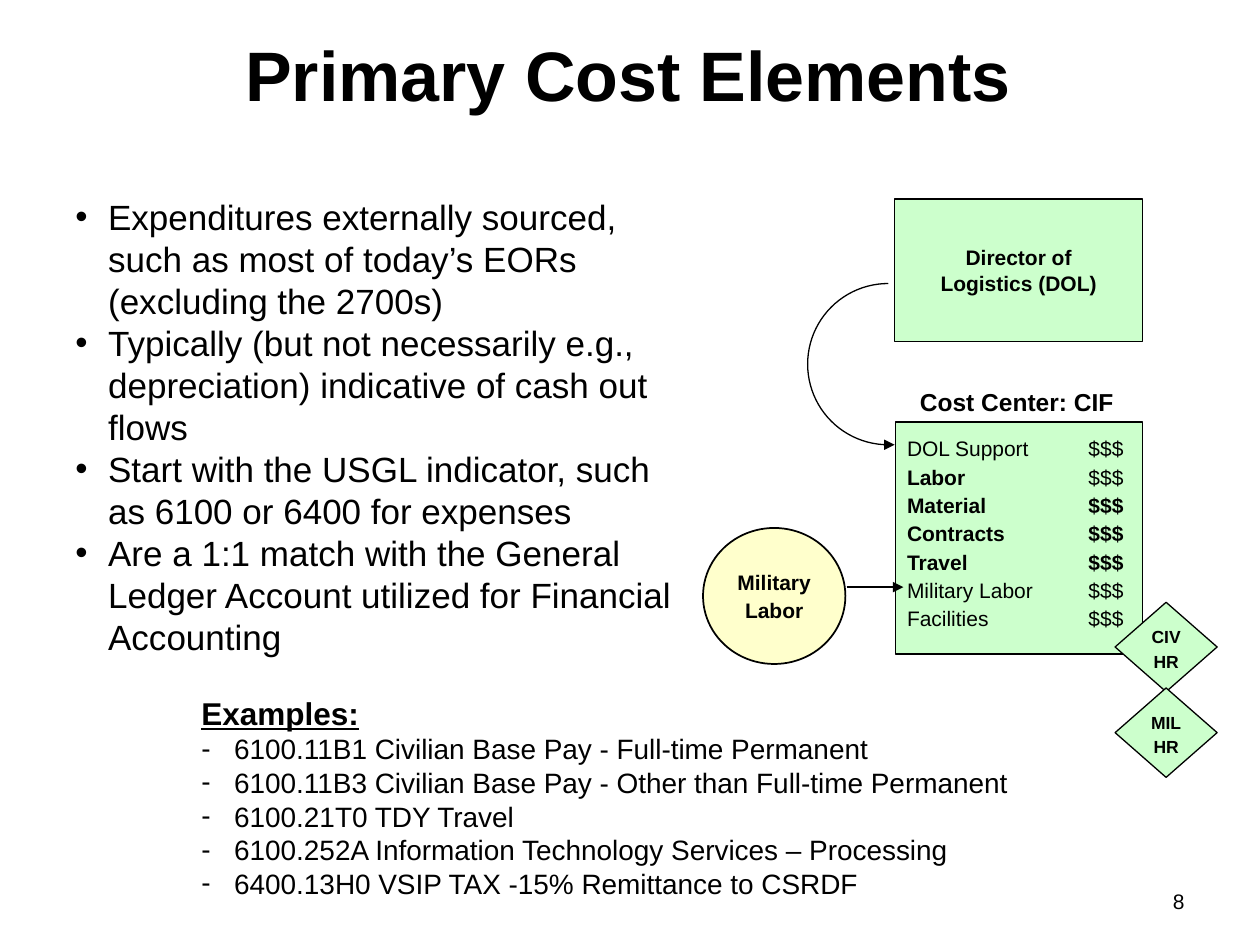
import lxml.etree
import pptx
import pptx.dml.color
import pptx.enum.shapes
import pptx.enum.text
import pptx.oxml.ns
import pptx.util

COLUMNS, ROWS = 100, 75  # grid cells are a tenth of an inch
SHAPES = pptx.enum.shapes.MSO_SHAPE
ALIGN = pptx.enum.text.PP_ALIGN
ANCHOR = pptx.enum.text.MSO_ANCHOR
GREEN, YELLOW, BLACK = "CCFFCC", "FFFFCC", "000000"


def color(hex_string):
    return pptx.dml.color.RGBColor.from_string(hex_string)


def add_xml(parent, tag, **attributes):
    return lxml.etree.SubElement(parent, pptx.oxml.ns.qn(tag), attributes)


class SlideBuilder:
    font_name = "Arial"
    hanging = 0.26  # bullet indent in inches

    def __init__(self, deck):
        self.slide = deck.slides.add_slide(deck.slide_layouts[6])
        self.cell_width = deck.slide_width / COLUMNS
        self.cell_height = deck.slide_height / ROWS

    def place(self, column, row):
        return round(column * self.cell_width), round(row * self.cell_height)

    def fill_text(self, shape, lines, size, bold=False, align=ALIGN.LEFT, after=0,
                  bullet=None, tab=None, heading=None, inset=0.05,
                  anchor=ANCHOR.TOP, wrap=True):
        """Each line is a string, or a list of (text, bold) spans."""
        frame = shape.text_frame
        frame.word_wrap = wrap
        frame.vertical_anchor = anchor
        frame.margin_left = frame.margin_right = pptx.util.Inches(0.1)
        frame.margin_top = frame.margin_bottom = pptx.util.Inches(inset)
        all_lines = [heading, *lines] if heading else lines
        for number, line in enumerate(all_lines):
            para = frame.paragraphs[0] if number == 0 else frame.add_paragraph()
            is_heading = heading is not None and number == 0
            para.alignment = align
            if after:
                para.space_after = pptx.util.Pt(after)
            properties = para._p.get_or_add_pPr()
            if bullet and not is_heading:
                indent = pptx.util.Inches(self.hanging)
                properties.set("marL", str(indent))
                properties.set("indent", str(-indent))
                bullet_color = add_xml(properties, "a:buClr")
                add_xml(bullet_color, "a:srgbClr", val=BLACK)
                add_xml(properties, "a:buFont", typeface=self.font_name)
                add_xml(properties, "a:buChar", char=bullet)
            if tab:
                tabs = add_xml(properties, "a:tabLst")
                add_xml(tabs, "a:tab", pos=str(pptx.util.Inches(tab)), algn="l")
            para.font.name = self.font_name
            para.font.size = pptx.util.Pt(size + 2 if is_heading else size)
            para.font.color.rgb = color(BLACK)
            if isinstance(line, str):
                para.font.bold = bold or is_heading
                para.font.underline = is_heading
                para.add_run().text = line
            else:
                for text, span_bold in line:
                    span = para.add_run()
                    span.text = text
                    span.font.bold = span_bold

    def text(self, column, row, width, height, lines, size, **style):
        box = self.slide.shapes.add_textbox(
            *self.place(column, row), *self.place(width, height))
        self.fill_text(box, lines, size, **style)

    def shape(self, kind, column, row, width, height, fill=None, weight=0.75):
        shape = self.slide.shapes.add_shape(
            kind, *self.place(column, row), *self.place(width, height))
        shape.shadow.inherit = False
        if fill:
            shape.fill.solid()
            shape.fill.fore_color.rgb = color(fill)
        else:
            shape.fill.background()
        shape.line.color.rgb = color(BLACK)
        shape.line.width = pptx.util.Pt(weight)
        return shape

    def arrow(self, start, end, row, weight):
        line = self.slide.shapes.add_connector(
            pptx.enum.shapes.MSO_CONNECTOR.STRAIGHT,
            *self.place(start, row), *self.place(end, row))
        line.line.color.rgb = color(BLACK)
        line.line.width = pptx.util.Pt(weight)
        add_xml(line.line._get_or_add_ln(), "a:tailEnd", type="triangle")
        add_xml(line._element.spPr, "a:effectLst")


def main():
    deck = pptx.Presentation()
    deck.slide_width = pptx.util.Inches(10)
    deck.slide_height = pptx.util.Inches(7.5)
    page = SlideBuilder(deck)
    label = {"bold": True, "align": ALIGN.CENTER}

    # Page number, title and main points
    page.text(71.7, 70, 23.3, 4, ["8"], 12, align=ALIGN.RIGHT)
    page.text(5, 15, 50, 41, [
        "Expenditures externally sourced, such as most of today’s EORs "
        "(excluding the 2700s)",
        "Typically (but not necessarily e.g., depreciation) indicative of "
        "cash out flows",
        "Start with the USGL indicator, such as 6100 or 6400 for expenses",
        "Are a 1:1 match with the General Ledger Account utilized for "
        "Financial Accounting",
    ], 20, bullet="•")
    page.text(13.2, 2.5, 73.3, 9.1, ["Primary Cost Elements"], 40, inset=0, **label)

    # Cost center, its director and the military labor pool
    page.shape(SHAPES.RECTANGLE, 71.1, 33.5, 19.6, 18.4, GREEN)
    page.text(71.6, 30.2, 18.2, 3.3, ["Cost Center: CIF"], 14, after=2, **label)
    labor_pool = page.shape(SHAPES.OVAL, 55.8, 41.9, 11.3, 10.8, YELLOW, 1)
    page.fill_text(labor_pool, ["Military", "Labor"], 12, after=2,
                   anchor=ANCHOR.MIDDLE, wrap=False, **label)
    director = page.shape(SHAPES.RECTANGLE, 71, 15.8, 19.7, 11.3, GREEN)
    page.fill_text(director, ["Director of", "Logistics (DOL)"], 12,
                   anchor=ANCHOR.MIDDLE, wrap=False, **label)

    # Personnel diamonds
    for name, row in (("CIV", 47.8), ("MIL", 54.6)):
        page.shape(SHAPES.DIAMOND, 88.5, row, 8.1, 7.1, GREEN)
        page.text(90, row + 1.4, 5.1, 4.6, [name, "HR"], 10, after=2,
                  wrap=False, **label)

    # Flows into the cost center
    arc = page.shape(SHAPES.ARC, 64.1, 22.5, 12.8, 12.8)
    for index, degrees in enumerate((90, 270)):
        arc.adjustments[index] = degrees * 0.6
    page.arrow(70.2, 71, 35.3, 0.75)
    page.arrow(67.2, 71.7, 46.6, 1)

    # Cost lines: name, bold name, bold amount
    costs = [
        ("DOL Support", False, False),
        ("Labor", True, False),
        ("Material", True, True),
        ("Contracts", True, True),
        ("Travel", True, True),
        ("Military Labor", False, False),
        ("Facilities", False, False),
    ]
    for number, (name, name_bold, amount_bold) in enumerate(costs):
        page.text(71, 34.6 + 2.25 * number, 21.9, 2,
                  [[(name, name_bold), ("\t$$$", amount_bold)]],
                  12, tab=1.44, inset=0)

    # Examples
    page.text(15, 55.1, 73.3, 19, [
        "6100.11B1 Civilian Base Pay - Full-time Permanent",
        "6100.11B3 Civilian Base Pay - Other than Full-time Permanent",
        "6100.21T0 TDY Travel",
        "6100.252A Information Technology Services – Processing",
        "6400.13H0 VSIP TAX -15% Remittance to CSRDF",
    ], 16, bullet="-", heading="Examples:", inset=0)

    deck.save("out.pptx")


if __name__ == "__main__":
    main()
